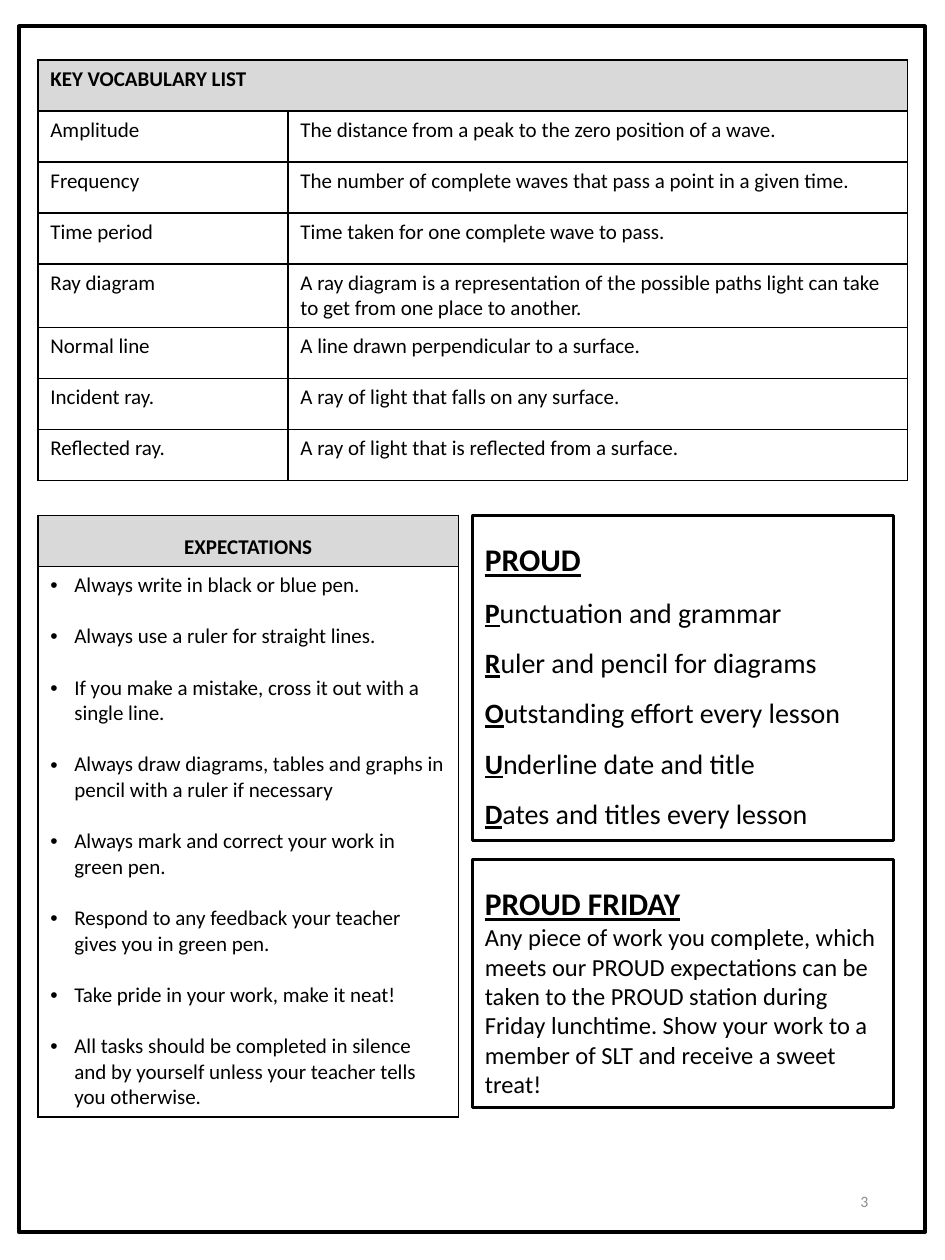
from dataclasses import dataclass

from lxml import etree
from pptx import Presentation
from pptx.dml.color import RGBColor
from pptx.enum.shapes import MSO_SHAPE
from pptx.enum.text import MSO_ANCHOR, PP_ALIGN
from pptx.oxml.ns import qn
from pptx.util import Inches, Pt

RECT = MSO_SHAPE.RECTANGLE
TOP, MIDDLE = MSO_ANCHOR.TOP, MSO_ANCHOR.MIDDLE
LEFT, CENTER, RIGHT = PP_ALIGN.LEFT, PP_ALIGN.CENTER, PP_ALIGN.RIGHT


@dataclass(frozen=True)
class Theme:
    font: str = "Calibri"
    ink: str = "000000"
    header: str = "D9D9D9"
    muted: str = "8C8C8C"
    heading: int = 18
    acronym: int = 16
    body: int = 14
    table: int = 12
    footer: int = 9
    frame_line: float = 2.25
    panel_line: float = 1.5
    cell_line: float = 1


THEME = Theme()
WIDTH, HEIGHT = Inches(7.5), Inches(10)
UNIT = WIDTH / 150  # the slide is a grid of 150 columns by 200 rows
ROW = 8.1  # height of a table row on the grid
LEFT_EDGE, RIGHT_PANEL = 6, 75
PANEL_WIDTH = 66.8
LOWER_TOP = 81.8

VOCABULARY = [
    ("Amplitude", "The distance from a peak to the zero position of a wave."),
    ("Frequency", "The number of complete waves that pass a point in a given time."),
    ("Time period", "Time taken for one complete wave to pass."),
    ("Ray diagram", "A ray diagram is a representation of the possible paths "
                    "light can take to get from one place to another."),
    ("Normal line", "A line drawn perpendicular to a surface."),
    ("Incident ray.", "A ray of light that falls on any surface."),
    ("Reflected ray.", "A ray of light that is reflected from a surface."),
]
EXPECTATIONS = [
    "Always write in black or blue pen.",
    "Always use a ruler for straight lines.",
    "If you make a mistake, cross it out with a single line.",
    "Always draw diagrams, tables and graphs in pencil with a ruler if necessary",
    "Always mark and correct your work in green pen.",
    "Respond to any feedback your teacher gives you in green pen.",
    "Take pride in your work, make it neat!",
    "All tasks should be completed in silence and by yourself unless your "
    "teacher tells you otherwise.",
]
PROUD = [
    "Punctuation and grammar",
    "Ruler and pencil for diagrams",
    "Outstanding effort every lesson",
    "Underline date and title",
    "Dates and titles every lesson",
]
FRIDAY = ("Any piece of work you complete, which meets our PROUD expectations can be "
          "taken to the PROUD station during Friday lunchtime. Show your work to a "
          "member of SLT and receive a sweet treat!")


def grid(*cells):
    return [round(c * UNIT) for c in cells]


def add_text(p, text, size=THEME.table, color=THEME.ink, bold=False,
             underline=False, align=LEFT, spacing=1.0):
    r = p.add_run()
    r.text = text
    r.font.name, r.font.size = THEME.font, Pt(size)
    r.font.bold, r.font.underline = bold, underline
    r.font.color.rgb = RGBColor.from_string(color)
    p.alignment, p.line_spacing = align, spacing


def next_paragraph(tf):
    """Return the first paragraph while it is empty, otherwise a new one."""
    first = tf.paragraphs[0]
    return tf.add_paragraph() if first.runs else first


def add_bullet(p, indent=0.19):
    pPr = p._p.get_or_add_pPr()
    pPr.set("marL", str(Inches(indent)))
    pPr.set("indent", str(-Inches(indent)))
    etree.SubElement(pPr, qn("a:buFont")).set("typeface", "Arial")
    etree.SubElement(pPr, qn("a:buChar")).set("char", "•")


def add_box(s, x, y, w, h, line):
    sp = s.shapes.add_shape(RECT, *grid(x, y, w, h))
    sp.shadow.inherit = False
    sp.fill.background()
    sp.line.color.rgb = RGBColor.from_string(THEME.ink)
    sp.line.width = Pt(line)
    tf = sp.text_frame
    tf.word_wrap, tf.vertical_anchor = True, TOP
    return tf


def add_panel(s, y, h, title):
    tf = add_box(s, RIGHT_PANEL, y, PANEL_WIDTH, h, THEME.panel_line)
    add_text(next_paragraph(tf), title, size=THEME.heading, bold=True,
             underline=True, spacing=1.5)
    return tf


def style_cell(cell, fill=None):
    if fill:
        cell.fill.solid()
        cell.fill.fore_color.rgb = RGBColor.from_string(fill)
    else:
        cell.fill.background()
    tcPr = cell._tc.get_or_add_tcPr()
    for i, side in enumerate(("lnL", "lnR", "lnT", "lnB")):
        ln = etree.Element(qn(f"a:{side}"), w=str(Pt(THEME.cell_line)))
        solid = etree.SubElement(ln, qn("a:solidFill"))
        etree.SubElement(solid, qn("a:srgbClr")).set("val", THEME.ink)
        tcPr.insert(i, ln)


def add_grid_table(s, x, y, widths, heights):
    """Add a bordered table whose first row is shaded."""
    shape = s.shapes.add_table(len(heights), len(widths),
                               *grid(x, y, sum(widths), sum(heights)))
    table = shape.table
    table.first_row = table.horz_banding = False
    for column, width in zip(table.columns, grid(*widths)):
        column.width = width
    for i, (row, height) in enumerate(zip(table.rows, grid(*heights))):
        row.height = height
        for cell in row.cells:
            style_cell(cell, THEME.header if i == 0 else None)
    return table


def add_vocabulary(s):
    heights = [ROW] * (len(VOCABULARY) + 1)
    table = add_grid_table(s, LEFT_EDGE, 9.5, [39.7, 98.4], heights)
    header = table.cell(0, 0)
    header.merge(table.cell(0, 1))
    add_text(header.text_frame.paragraphs[0], "KEY VOCABULARY LIST", bold=True)
    for i, entry in enumerate(VOCABULARY, start=1):
        for j, text in enumerate(entry):
            add_text(table.cell(i, j).text_frame.paragraphs[0], text)


def add_expectations(s):
    table = add_grid_table(s, LEFT_EDGE, LOWER_TOP, [PANEL_WIDTH], [ROW, 87.3])
    add_text(table.cell(0, 0).text_frame.paragraphs[0], "EXPECTATIONS",
             bold=True, align=CENTER, spacing=1.5)
    tf = table.cell(1, 0).text_frame
    for text in EXPECTATIONS:
        p = next_paragraph(tf)
        add_text(p, text)
        if text != EXPECTATIONS[-1]:
            p.space_after = Pt(14.65)
        add_bullet(p)


def add_proud(s):
    tf = add_panel(s, LOWER_TOP, 51.6, "PROUD")
    for text in PROUD:
        p = next_paragraph(tf)
        add_text(p, text[0], size=THEME.acronym, bold=True, underline=True, spacing=1.5)
        add_text(p, text[1:], size=THEME.acronym, spacing=1.5)


def add_friday(s):
    tf = add_panel(s, 136.4, 39.4, "PROUD FRIDAY")
    add_text(next_paragraph(tf), FRIDAY, size=THEME.body)


def add_page_number(s, number):
    tf = s.shapes.add_textbox(*grid(106, 185.4, 33.8, 10.6)).text_frame
    tf.word_wrap, tf.vertical_anchor = True, MIDDLE
    add_text(tf.paragraphs[0], number, size=THEME.footer, color=THEME.muted, align=RIGHT)


def main():
    prs = Presentation()
    prs.slide_width, prs.slide_height = WIDTH, HEIGHT
    s = prs.slides.add_slide(prs.slide_layouts[6])
    add_box(s, 3, 4.2, 143.8, 191.4, THEME.frame_line)
    add_vocabulary(s)
    add_expectations(s)
    add_proud(s)
    add_friday(s)
    add_page_number(s, "3")
    prs.save("out.pptx")


if __name__ == "__main__":
    main()
